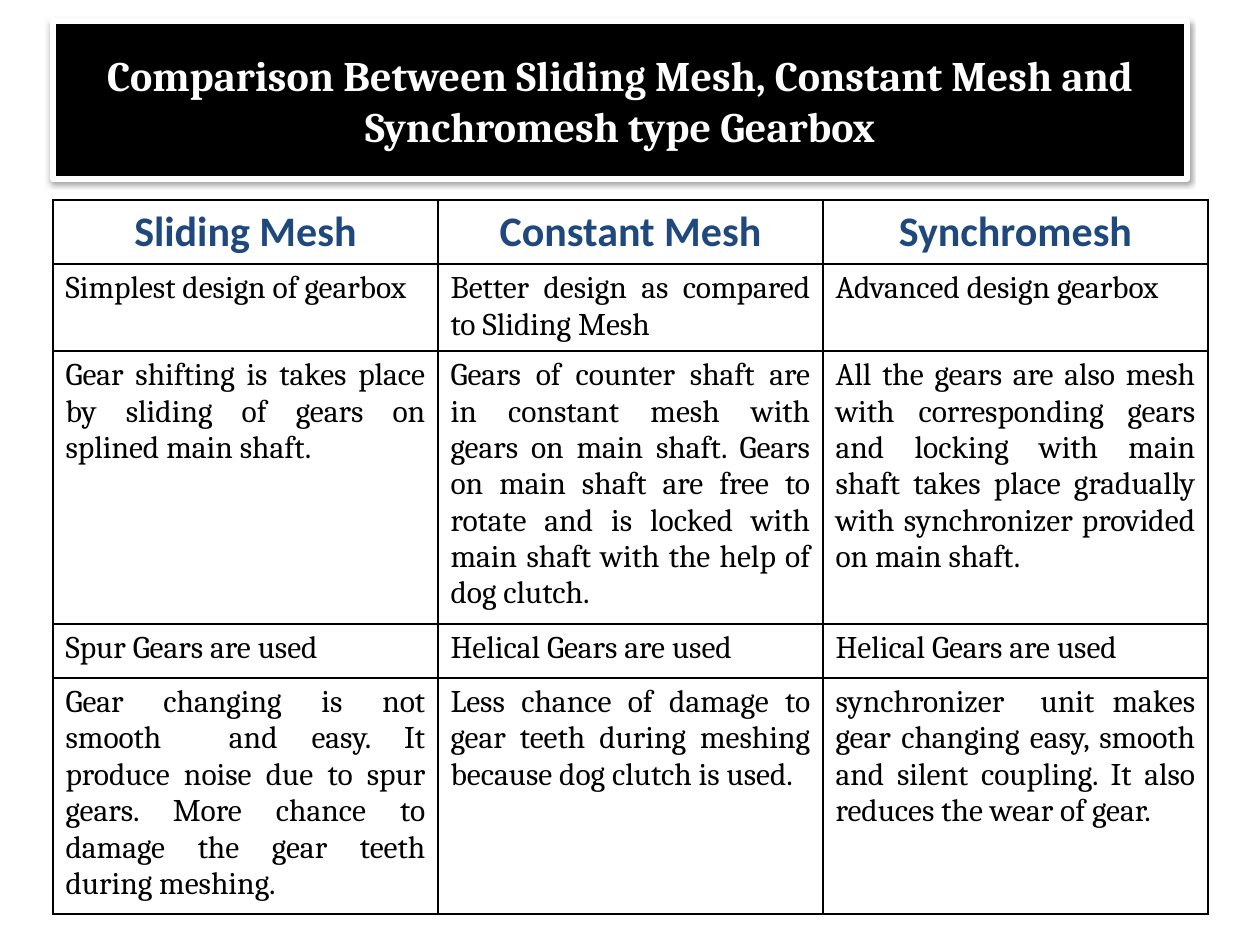
from dataclasses import dataclass

from lxml import etree
from pptx import Presentation
from pptx.dml.color import RGBColor
from pptx.enum.shapes import MSO_SHAPE
from pptx.enum.text import MSO_ANCHOR, PP_ALIGN
from pptx.oxml.ns import qn
from pptx.util import Emu, Pt

RECT = MSO_SHAPE.RECTANGLE
MIDDLE = MSO_ANCHOR.MIDDLE
CENTER = PP_ALIGN.CENTER
JUSTIFY = PP_ALIGN.JUSTIFY
SCALE = 914400 / 126


@dataclass(frozen=True)
class Style:
    font: str
    size: int
    color: str
    bold: bool
    align: PP_ALIGN


@dataclass(frozen=True)
class Theme:
    black: str = "000000"
    white: str = "FFFFFF"
    title: Style = Style("Cambria", 24, "FFFFFF", True, CENTER)
    head: Style = Style("Calibri", 24, "1F497D", True, CENTER)
    body: Style = Style("Cambria", 18, "000000", False, JUSTIFY)


@dataclass(frozen=True)
class Row:
    height: int
    style: Style
    texts: tuple[str, str, str]


THEME = Theme()
TITLE = "Comparison Between Sliding Mesh, Constant Mesh and Synchromesh type Gearbox"
ROWS = (
    Row(64, THEME.head, ("Sliding Mesh", "Constant Mesh", "Synchromesh")),
    Row(87, THEME.body, (
        "Simplest design of gearbox",
        "Better design as compared to Sliding Mesh",
        "Advanced design gearbox",
    )),
    Row(273, THEME.body, (
        "Gear shifting is takes place by sliding of gears on splined main shaft.",
        "Gears of counter shaft are in constant mesh with gears on main shaft. "
        "Gears on main shaft are free to rotate and is locked with main shaft "
        "with the help of dog clutch.",
        "All the gears are also mesh with corresponding gears and locking with "
        "main shaft takes place gradually with synchronizer provided on main shaft.",
    )),
    Row(54, THEME.body, (
        "Spur Gears are used",
        "Helical Gears are used",
        "Helical Gears are used",
    )),
    Row(236, THEME.body, (
        "Gear changing is not smooth  and easy. It produce noise due to spur "
        "gears. More chance to damage the gear teeth during meshing.",
        "Less chance of damage to gear teeth during meshing because dog clutch "
        "is used.",
        "synchronizer  unit makes gear changing easy, smooth and silent "
        "coupling. It also reduces the wear of gear.",
    )),
)


def px(count: int) -> Emu:
    return Emu(round(count * SCALE))


def rgb(color: str) -> RGBColor:
    return RGBColor.from_string(color)


def write(frame, text: str, style: Style) -> None:
    frame.word_wrap = True
    para = frame.paragraphs[0]
    para.alignment = style.align
    run = para.add_run()
    run.text = text
    font = run.font
    font.name = style.font
    font.size = Pt(style.size)
    font.bold = style.bold
    font.color.rgb = rgb(style.color)


def tint(parent, color: str):
    return etree.SubElement(parent, qn("a:srgbClr"), val=color)


def border(cell) -> None:
    props = cell._tc.get_or_add_tcPr()
    for side in ("lnL", "lnR", "lnT", "lnB"):
        line = etree.SubElement(props, qn(f"a:{side}"), w=str(Pt(1)))
        tint(etree.SubElement(line, qn("a:solidFill")), THEME.black)


def shade(shape) -> None:
    shape.shadow.inherit = False
    effects = shape._element.spPr.find(qn("a:effectLst"))
    shadow = etree.SubElement(
        effects, qn("a:outerShdw"), blurRad="40000", dist="20000",
        dir="5400000", rotWithShape="0",
    )
    etree.SubElement(tint(shadow, THEME.black), qn("a:alpha"), val="38000")


def banner(slide) -> None:
    shape = slide.shapes.add_shape(RECT, px(53), px(21), px(1134), px(158))
    shape.fill.solid()
    shape.fill.fore_color.rgb = rgb(THEME.black)
    shape.line.color.rgb = rgb(THEME.white)
    shape.line.width = Pt(3)
    shade(shape)
    shape.text_frame.vertical_anchor = MIDDLE
    write(shape.text_frame, TITLE, THEME.title)


def grid(slide, rows: tuple[Row, ...]) -> None:
    count = len(rows[0].texts)
    height = sum(row.height for row in rows)
    table = slide.shapes.add_table(
        len(rows), count, px(53), px(200), px(385 * count), px(height)
    ).table
    for col in table.columns:
        col.width = px(385)
    for line, row in zip(table.rows, rows):
        line.height = px(row.height)
        for cell, text in zip(line.cells, row.texts):
            border(cell)
            cell.fill.solid()
            cell.fill.fore_color.rgb = rgb(THEME.white)
            write(cell.text_frame, text, row.style)


def main() -> None:
    deck = Presentation()
    deck.slide_width = px(1260)
    deck.slide_height = px(945)
    slide = deck.slides.add_slide(deck.slide_layouts[6])
    grid(slide, ROWS)
    banner(slide)
    deck.save("out.pptx")


if __name__ == "__main__":
    main()
